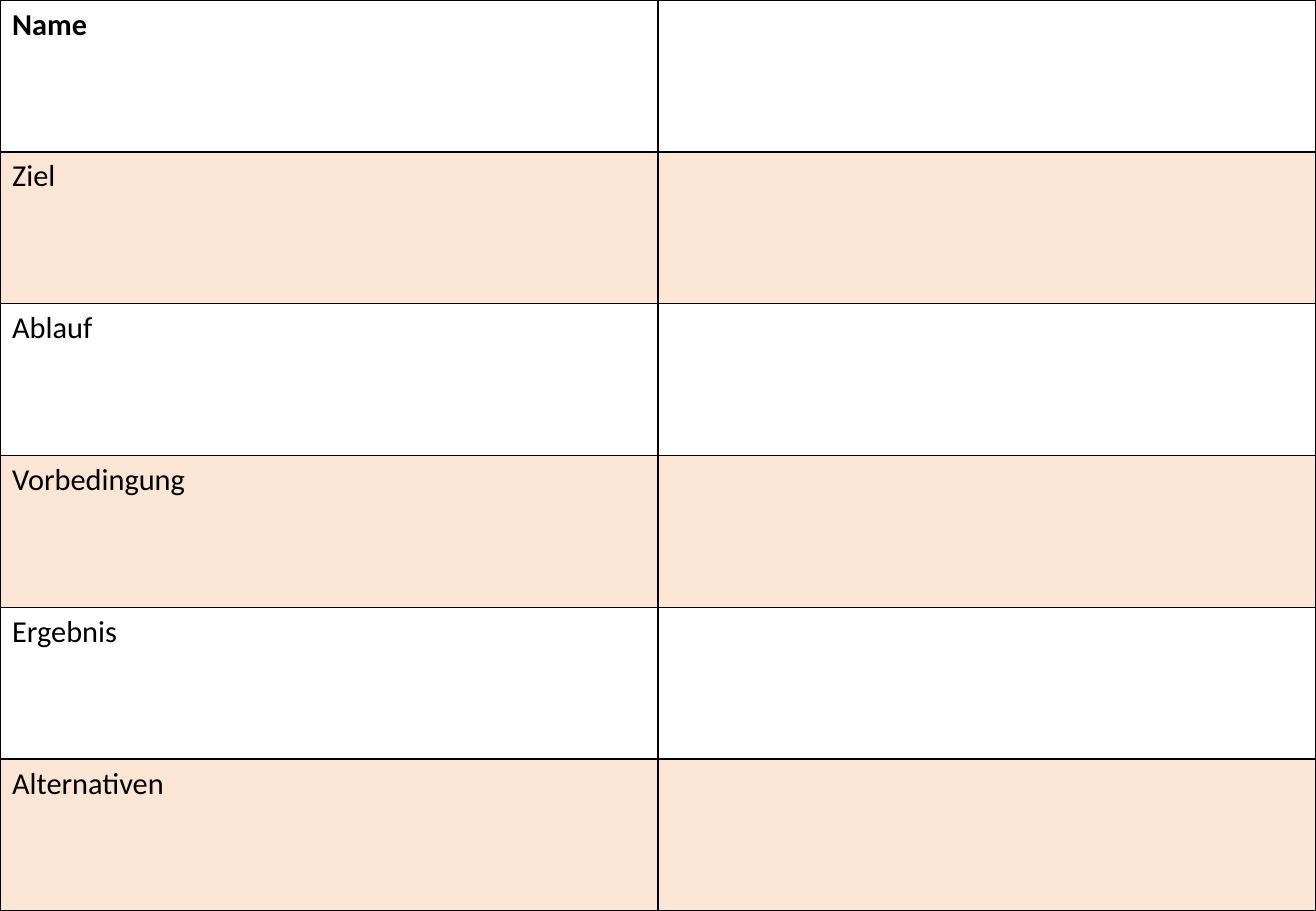
from lxml.etree import SubElement
from pptx import Presentation
from pptx.dml.color import RGBColor
from pptx.oxml.ns import qn
from pptx.util import Inches, Pt

BLACK = RGBColor(0x00, 0x00, 0x00)
ORANGE = RGBColor(0xED, 0x7D, 0x31)
BAND_OPACITY = 20
FONT = "Calibri"
LABELS = ["Name", "Ziel", "Ablauf", "Vorbedingung", "Ergebnis", "Alternativen"]
PAGE_WIDTH = 10.83
PAGE_HEIGHT = 7.5


def draw_borders(cell):
    """Draw a thin black line on all four sides of a cell."""
    properties = cell._tc.get_or_add_tcPr()
    for side in ("lnL", "lnR", "lnT", "lnB"):
        line = SubElement(properties, qn(f"a:{side}"), w=str(Pt(1)))
        fill = SubElement(line, qn("a:solidFill"))
        SubElement(fill, qn("a:srgbClr"), val=str(BLACK))


def fill_cell(cell, banded):
    """Tint a banded cell with translucent orange and leave others clear."""
    if not banded:
        cell.fill.background()
        return
    cell.fill.solid()
    cell.fill.fore_color.rgb = ORANGE
    color = cell._tc.tcPr.find(f"{qn('a:solidFill')}/{qn('a:srgbClr')}")
    SubElement(color, qn("a:alpha"), val=str(BAND_OPACITY * 1000))


def add_use_case_table(page, left, top, width, height):
    """Place the two-column use case form in the given box, in inches."""
    frame = page.shapes.add_table(
        len(LABELS), 2, Inches(left), Inches(top), Inches(width), Inches(height)
    )
    table = frame.table
    for row, label in enumerate(LABELS):
        table.cell(row, 0).text = label
        for column in range(2):
            cell = table.cell(row, column)
            draw_borders(cell)
            fill_cell(cell, banded=row % 2 == 1)
            font = cell.text_frame.paragraphs[0].font
            font.name = FONT
            font.size = Pt(18)
            font.bold = row == 0
            font.color.rgb = BLACK


def main():
    """Build the deck with its single form page."""
    deck = Presentation()
    deck.slide_width = Inches(PAGE_WIDTH)
    deck.slide_height = Inches(PAGE_HEIGHT)
    page = deck.slides.add_slide(deck.slide_layouts[6])
    add_use_case_table(page, 0, 0, PAGE_WIDTH, PAGE_HEIGHT)
    deck.save("out.pptx")


if __name__ == "__main__":
    main()
